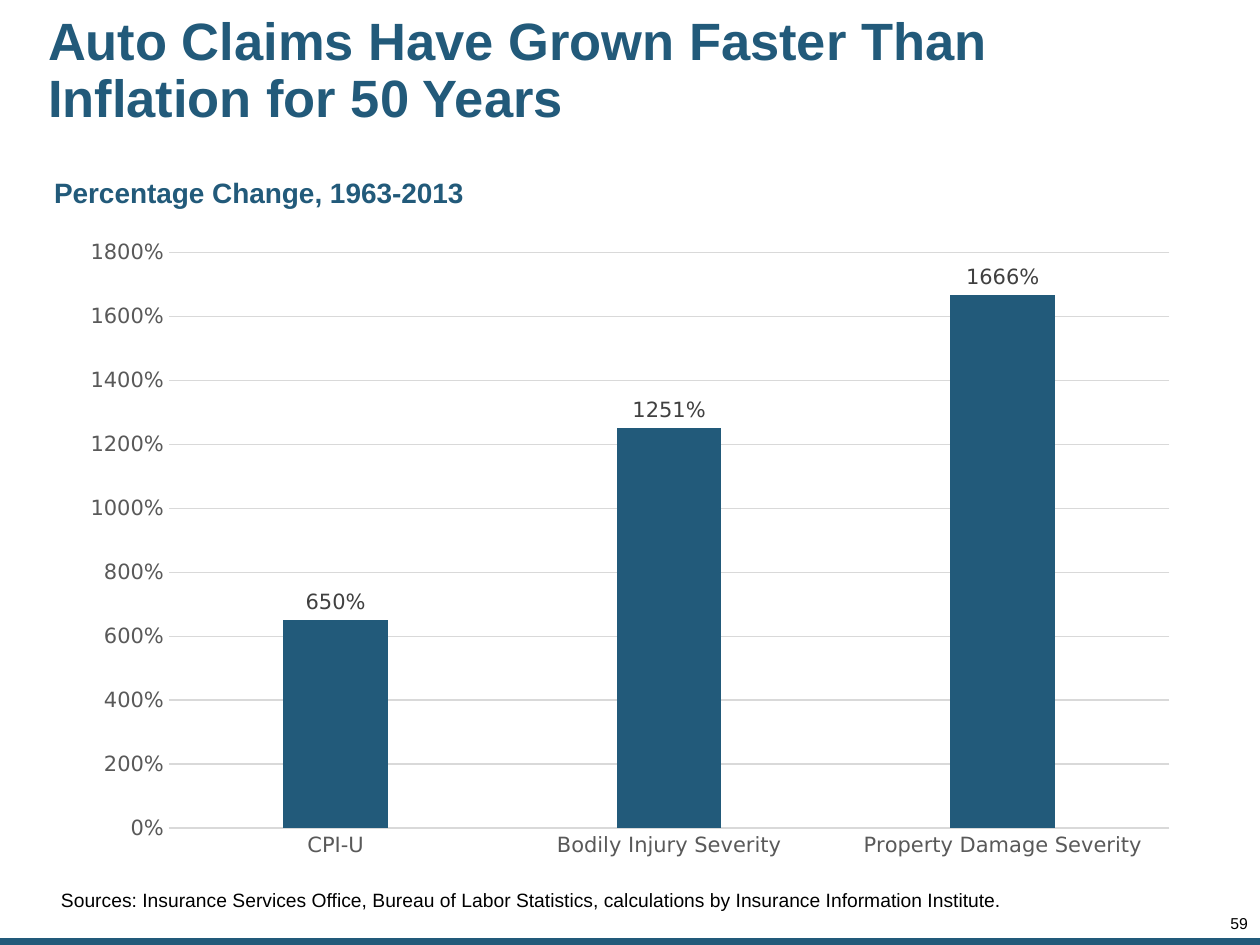
"""Build the slide on auto claims growth compared with inflation."""
from pptx import Presentation
from pptx.chart.data import CategoryChartData
from pptx.dml.color import RGBColor
from pptx.enum.chart import XL_CHART_TYPE as ChartType, XL_LABEL_POSITION as LabelPos, XL_TICK_MARK as Tick
from pptx.enum.shapes import MSO_SHAPE as Preset
from pptx.enum.text import MSO_ANCHOR as Anchor, PP_ALIGN as Align
from pptx.util import Pt

NAVY = RGBColor(0x22, 0x5A, 0x7A)
BLACK = RGBColor(0, 0, 0)
AXIS_GRAY = RGBColor(0x59, 0x59, 0x59)
LABEL_GRAY = RGBColor(0x40, 0x40, 0x40)
GRID_GRAY = RGBColor(0xD9, 0xD9, 0xD9)
PX = 914400 / 126


def px(*lengths):
    return [round(length * PX) for length in lengths]


def write(holder, text, size, color=BLACK, bold=False, align=Align.LEFT,
          anchor=Anchor.TOP, spacing=1.0, insets=(0, 0, 0, 0)):
    frame = holder.text_frame
    frame.word_wrap = True
    frame.vertical_anchor = anchor
    (frame.margin_left, frame.margin_top,
     frame.margin_right, frame.margin_bottom) = px(*insets)
    line = frame.paragraphs[0]
    line.alignment = align
    line.line_spacing = spacing
    run = line.add_run()
    run.text = text
    run.font.name = "Arial"
    run.font.size = Pt(size)
    run.font.bold = bold
    run.font.color.rgb = color


deck = Presentation()
deck.slide_width, deck.slide_height = px(1260, 945)
slide = deck.slides.add_slide(deck.slide_layouts[5])
shapes = slide.shapes

footer_band = shapes.add_shape(Preset.RECTANGLE, *px(0, 938, 1260, 7))
footer_band.shadow.inherit = False
footer_band.fill.solid()
footer_band.fill.fore_color.rgb = NAVY
footer_band.line.fill.background()

headline = shapes.title
headline.left, headline.top, headline.width, headline.height = px(42, 13, 1019, 118)
write(headline, "Auto Claims Have Grown Faster Than Inflation for 50 Years", 30,
      color=NAVY, bold=True, anchor=Anchor.MIDDLE, spacing=0.9, insets=(6, 6, 6, 6))

growth = CategoryChartData(number_format="0%")
growth.categories = ["CPI-U", "Bodily Injury Severity", "Property Damage Severity"]
growth.add_series("Series 1", [6.5, 12.51, 16.66])
chart = shapes.add_chart(ChartType.COLUMN_CLUSTERED, *px(68, 227, 1124, 644), growth).chart
chart.has_legend = False
chart.has_title = False
chart.font.name = "DejaVu Sans"
chart.font.size = Pt(10)

claims, percent = chart.category_axis, chart.value_axis
for axis in (claims, percent):
    axis.major_tick_mark = axis.minor_tick_mark = Tick.NONE
    axis.tick_labels.font.name = "DejaVu Sans"
    axis.tick_labels.font.size = Pt(12)
    axis.tick_labels.font.color.rgb = AXIS_GRAY
percent.minimum_scale, percent.maximum_scale, percent.major_unit = 0, 18, 2
percent.tick_labels.number_format = "0%"
percent.tick_labels.number_format_is_linked = False
percent.format.line.fill.background()
for rule in (claims.format.line, percent.major_gridlines.format.line):
    rule.color.rgb = GRID_GRAY
    rule.width = Pt(0.75)

columns = chart.plots[0]
columns.gap_width = 219
columns.overlap = -27
columns.vary_by_categories = False
columns.series[0].format.fill.solid()
columns.series[0].format.fill.fore_color.rgb = NAVY
values = columns.series[0].data_labels
values.show_value = True
values.position = LabelPos.OUTSIDE_END
values.number_format = "0%"
values.number_format_is_linked = False
values.font.name = "DejaVu Sans"
values.font.size = Pt(12)
values.font.color.rgb = LABEL_GRAY

page_number = shapes.add_textbox(*px(1186, 917, 62, 16))
write(page_number, "59", 9, align=Align.RIGHT, spacing=0.85)

subtitle = shapes.add_textbox(*px(42, 170, 486, 47))
write(subtitle, "Percentage Change, 1963-2013", 16, color=NAVY, bold=True,
      insets=(12, 6, 12, 6))

sources = shapes.add_textbox(*px(11, 891, 1208, 39))
write(sources, "Sources: Insurance Services Office, Bureau of Labor Statistics, "
      "calculations by Insurance Information Institute.", 11,
      anchor=Anchor.BOTTOM, spacing=0.85, insets=(50, 0, 0, 19))

deck.save("out.pptx")
